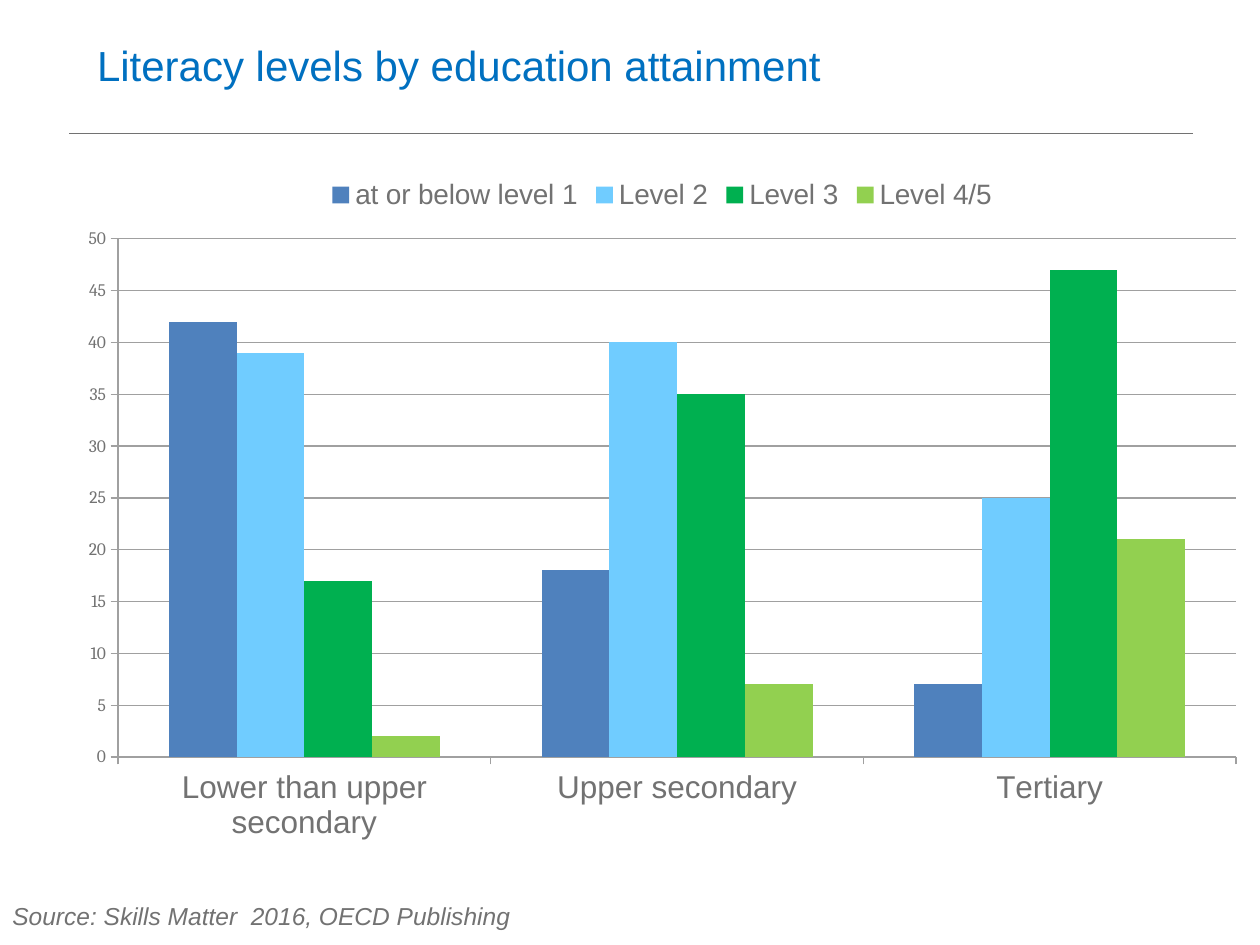
from lxml import etree
from pptx import Presentation
from pptx.chart.data import CategoryChartData
from pptx.dml.color import RGBColor
from pptx.enum.chart import XL_CHART_TYPE as ChartType, XL_LEGEND_POSITION as LegendPos
from pptx.enum.chart import XL_TICK_MARK as TickMark
from pptx.enum.shapes import MSO_CONNECTOR as Connector
from pptx.enum.text import MSO_ANCHOR as Anchor, PP_ALIGN as Align
from pptx.oxml.ns import qn
from pptx.util import Inches, Pt

WHITE = RGBColor(0xFF, 0xFF, 0xFF)
BLUE = RGBColor(0x00, 0x70, 0xC0)
GREY = RGBColor(0x72, 0x72, 0x72)
GRID = RGBColor(0xA0, 0xA0, 0xA0)

CATEGORIES = ["Lower than upper secondary", "Upper secondary", "Tertiary"]
LEVELS = [
    ("at or below level 1", (42, 18, 7), RGBColor(0x4F, 0x81, 0xBD)),
    ("Level 2", (39, 40, 25), RGBColor(0x70, 0xCC, 0xFF)),
    ("Level 3", (17, 35, 47), RGBColor(0x00, 0xB0, 0x50)),
    ("Level 4/5", (2, 7, 21), RGBColor(0x92, 0xD0, 0x50)),
]
PLOT_LAYOUT = [("layoutTarget", "inner"), ("xMode", "edge"), ("yMode", "edge"),
               ("x", "0.045"), ("y", "0.107"), ("w", "0.935"), ("h", "0.752")]


def style_font(font, size, color=GREY, name="Arial"):
    font.size = Pt(size)
    font.name = name
    font.color.rgb = color


def style_line(line, color, width):
    line.color.rgb = color
    line.width = Pt(width)


def set_title(slide, text):
    sp = slide.shapes.title
    sp.left, sp.top = Inches(0.67), Inches(0.02)
    sp.width, sp.height = Inches(8.82), Inches(0.99)
    tf = sp.text_frame
    tf.text = text
    tf.vertical_anchor = Anchor.MIDDLE
    p = tf.paragraphs[0]
    p.alignment = Align.LEFT
    style_font(p.runs[0].font, 24, BLUE)


def add_rule(slide):
    left, right, y = Inches(0.55), Inches(9.47), Inches(1.06)
    rule = slide.shapes.add_connector(Connector.STRAIGHT, left, y, right, y)
    style_line(rule.line, GREY, 0.5)
    etree.SubElement(rule._element.spPr, qn("a:effectLst"))


def set_plot_layout(chart):
    plot_area = chart._chartSpace.chart.plotArea
    for old in plot_area.findall(qn("c:layout")):
        plot_area.remove(old)
    layout = etree.Element(qn("c:layout"))
    plot_area.insert(0, layout)
    manual = etree.SubElement(layout, qn("c:manualLayout"))
    for tag, val in PLOT_LAYOUT:
        etree.SubElement(manual, qn(f"c:{tag}")).set("val", val)


def style_axis(axis, size, font_name):
    axis.major_tick_mark = TickMark.OUTSIDE
    axis.minor_tick_mark = TickMark.NONE
    style_line(axis.format.line, GRID, 0.75)
    style_font(axis.tick_labels.font, size, name=font_name)


def add_level_chart(slide):
    data = CategoryChartData(number_format="0")
    data.categories = CATEGORIES
    for name, values, _ in LEVELS:
        data.add_series(name, values)
    chart = slide.shapes.add_chart(ChartType.COLUMN_CLUSTERED, Inches(0.51), Inches(1.31),
                                   Inches(9.49), Inches(5.47), data).chart
    chart.has_title = False
    style_font(chart.font, 10, name="Cambria")
    set_plot_layout(chart)

    plot = chart.plots[0]
    plot.gap_width = 150
    plot.overlap = 0
    plot.vary_by_categories = False
    for series, (_, _, color) in zip(plot.series, LEVELS):
        series.format.fill.solid()
        series.format.fill.fore_color.rgb = color

    style_axis(chart.category_axis, 18, "Arial")
    axis = chart.value_axis
    style_axis(axis, 10, "Cambria")
    axis.minimum_scale, axis.maximum_scale, axis.major_unit = 0, 50, 5
    axis.tick_labels.number_format = "0"
    axis.tick_labels.number_format_is_linked = False
    style_line(axis.major_gridlines.format.line, GRID, 0.75)

    chart.has_legend = True
    chart.legend.position = LegendPos.TOP
    chart.legend.include_in_layout = False
    style_font(chart.legend.font, 16)


def add_source(slide, text):
    tf = slide.shapes.add_textbox(Inches(0), Inches(7.1), Inches(6.3), Inches(0.34)).text_frame
    tf.word_wrap = True
    tf.text = text
    r = tf.paragraphs[0].runs[0]
    style_font(r.font, 14)
    r.font.italic = True


def main():
    prs = Presentation()
    prs.slide_width, prs.slide_height = Inches(10), Inches(7.5)
    slide = prs.slides.add_slide(prs.slide_layouts[5])
    slide.background.fill.solid()
    slide.background.fill.fore_color.rgb = WHITE
    add_rule(slide)
    set_title(slide, "Literacy levels by education attainment")
    add_level_chart(slide)
    add_source(slide, "Source: Skills Matter  2016, OECD Publishing")
    prs.save("out.pptx")


if __name__ == "__main__":
    main()
